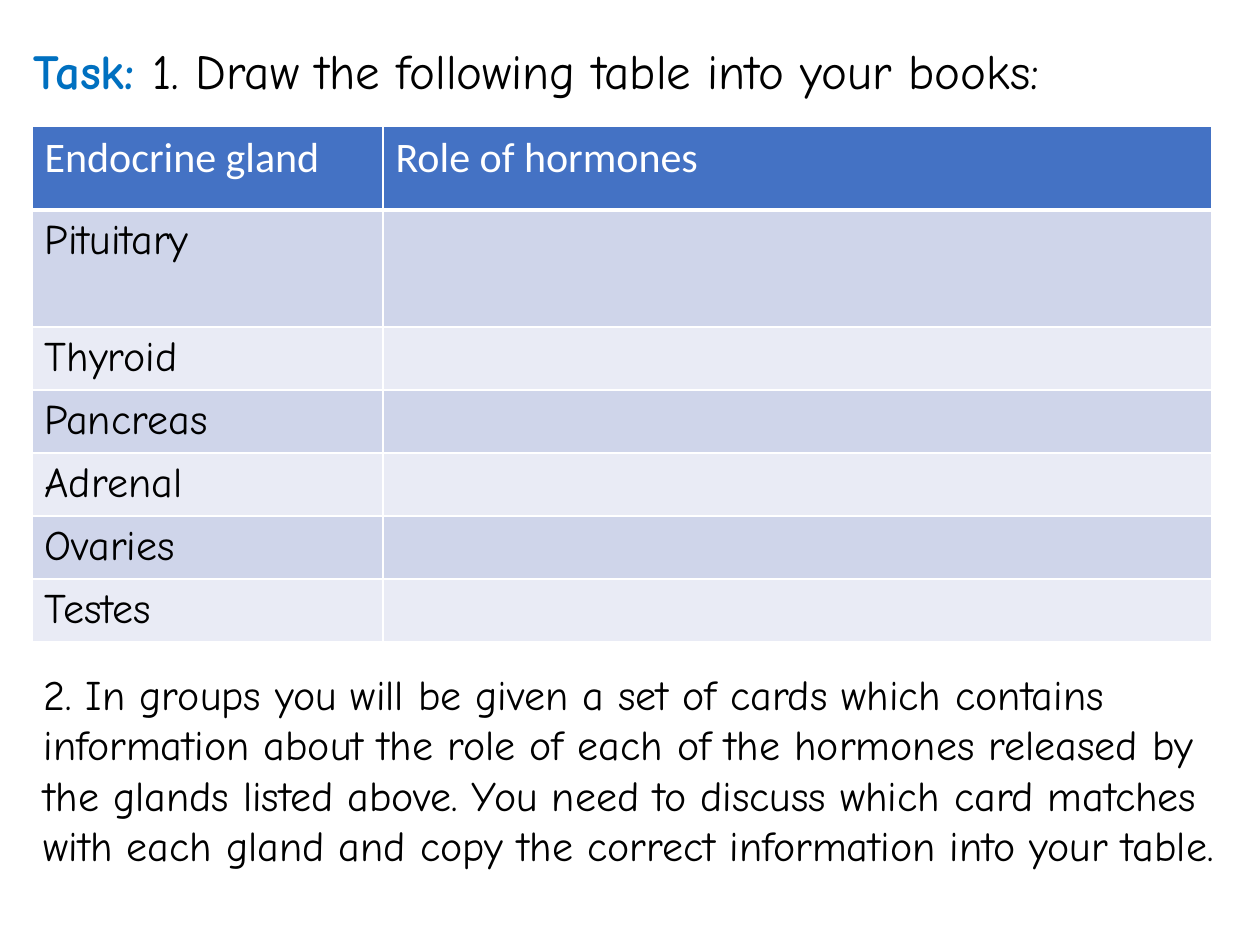
from lxml import etree
from pptx import Presentation
from pptx import util as u
from pptx.dml.color import RGBColor
from pptx.enum import text
from pptx.oxml import ns

SCALE = 914400 / 126
BLUE = RGBColor(0x44, 0x72, 0xC4)
SKY = RGBColor(0x00, 0x70, 0xC0)
DARK = RGBColor(0xCF, 0xD5, 0xEA)
PALE = RGBColor(0xE9, 0xEB, 0xF5)
WHITE = RGBColor(0xFF, 0xFF, 0xFF)
BLACK = RGBColor(0, 0, 0)

HEADS = ["Endocrine gland", "Role of hormones"]
GLANDS = ["Pituitary", "Thyroid", "Pancreas", "Adrenal", "Ovaries", "Testes"]
COLS = [351, 829]
ROWS = [84, 117] + [63] * 5
STEPS = (
    "2. In groups you will be given a set of cards which contains "
    "information about the role of each of the hormones released by "
    "the glands listed above. You need to discuss which card matches "
    "with each gland and copy the correct information into your table."
)


def px(size):
    return u.Emu(round(size * SCALE))


def apply(item, **vals):
    for name, val in vals.items():
        setattr(item, name, val)


def write(para, words, color, size=24, font="Comic Neue", bold=False):
    run = para.add_run()
    run.text = words
    apply(run.font, size=u.Pt(size), name=font, bold=bold)
    run.font.color.rgb = color


def place(holder, left, top, width, height):
    apply(holder, left=px(left), top=px(top),
          width=px(width), height=px(height))
    frame = holder.text_frame
    apply(frame, word_wrap=True, auto_size=text.MSO_AUTO_SIZE.NONE,
          vertical_anchor=text.MSO_ANCHOR.TOP)
    para = frame.paragraphs[0]
    apply(para, alignment=text.PP_ALIGN.LEFT, line_spacing=1.0,
          space_before=u.Pt(0))
    props = para._p.get_or_add_pPr()
    props.set("marL", "0")
    props.set("indent", "0")
    etree.SubElement(props, ns.qn("a:buNone"))
    return para


def border(cell, base):
    props = cell._tc.get_or_add_tcPr()
    for side, width in zip("LRTB", (1, 1, 1, base)):
        line = etree.SubElement(props, ns.qn("a:ln" + side),
                                w=str(u.Pt(width)))
        fill = etree.SubElement(line, ns.qn("a:solidFill"))
        etree.SubElement(fill, ns.qn("a:srgbClr"), val=str(WHITE))


def add_grid(slide, left, top):
    rows = [HEADS] + [[gland, ""] for gland in GLANDS]
    grid = slide.shapes.add_table(
        len(ROWS), len(COLS), px(left), px(top),
        px(sum(COLS)), px(sum(ROWS))).table
    for col, width in zip(grid.columns, COLS):
        col.width = px(width)
    for row, height in zip(grid.rows, ROWS):
        row.height = px(height)
    for i, row in enumerate(rows):
        head = i == 0
        shade = BLUE if head else DARK if i % 2 else PALE
        for j, words in enumerate(row):
            cell = grid.cell(i, j)
            border(cell, 3 if head else 1)
            cell.fill.solid()
            cell.fill.fore_color.rgb = shade
            if words:
                write(cell.text_frame.paragraphs[0], words,
                      WHITE if head else BLACK,
                      font="Calibri" if head else "Comic Neue")


def main():
    deck = Presentation()
    apply(deck, slide_width=px(1260), slide_height=px(945))
    slide = deck.slides.add_slide(deck.slide_layouts[1])
    title = place(slide.shapes.title, 21, 34, 1213, 72)
    write(title, "Task: ", SKY, size=28, bold=True)
    write(title, "1. Draw the following table into your books:", BLACK, size=28)
    add_grid(slide, 32, 126)
    body = place(slide.placeholders[1], 31, 662, 1198, 267)
    write(body, STEPS, BLACK)
    deck.save("out.pptx")


if __name__ == "__main__":
    main()
